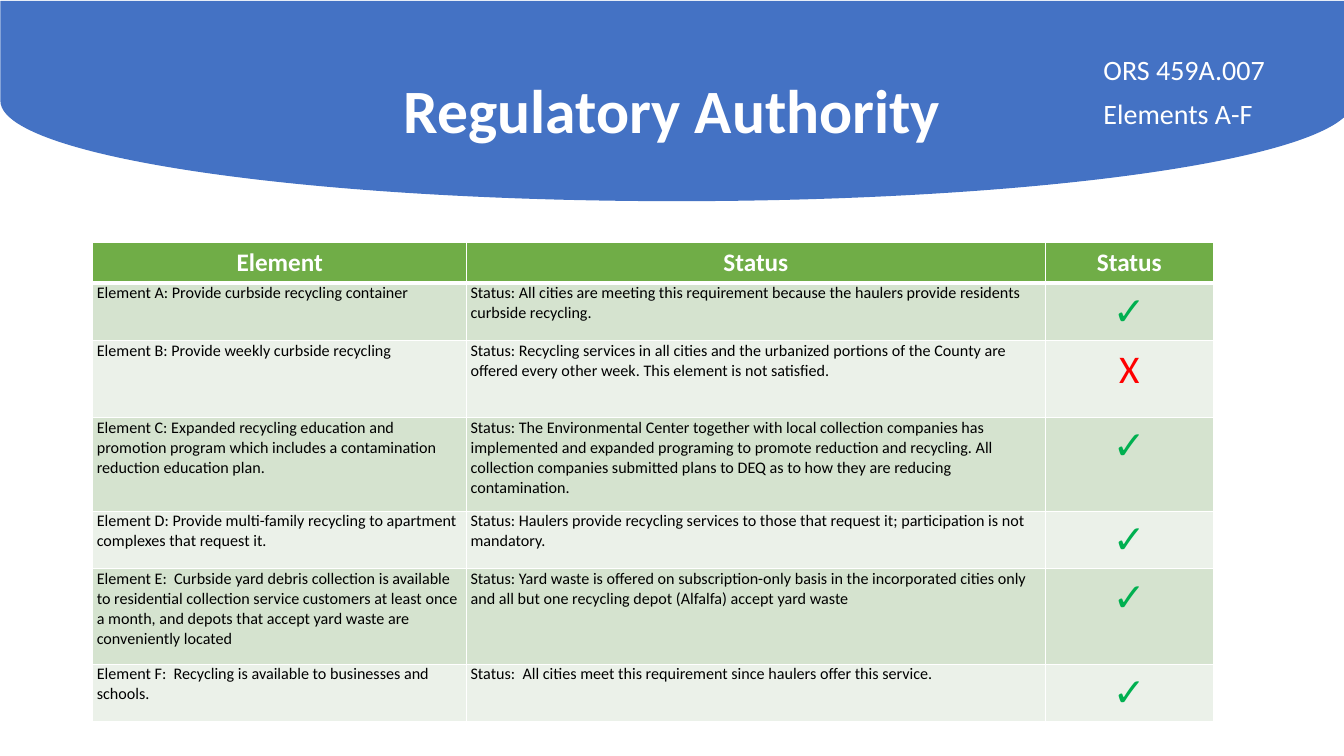
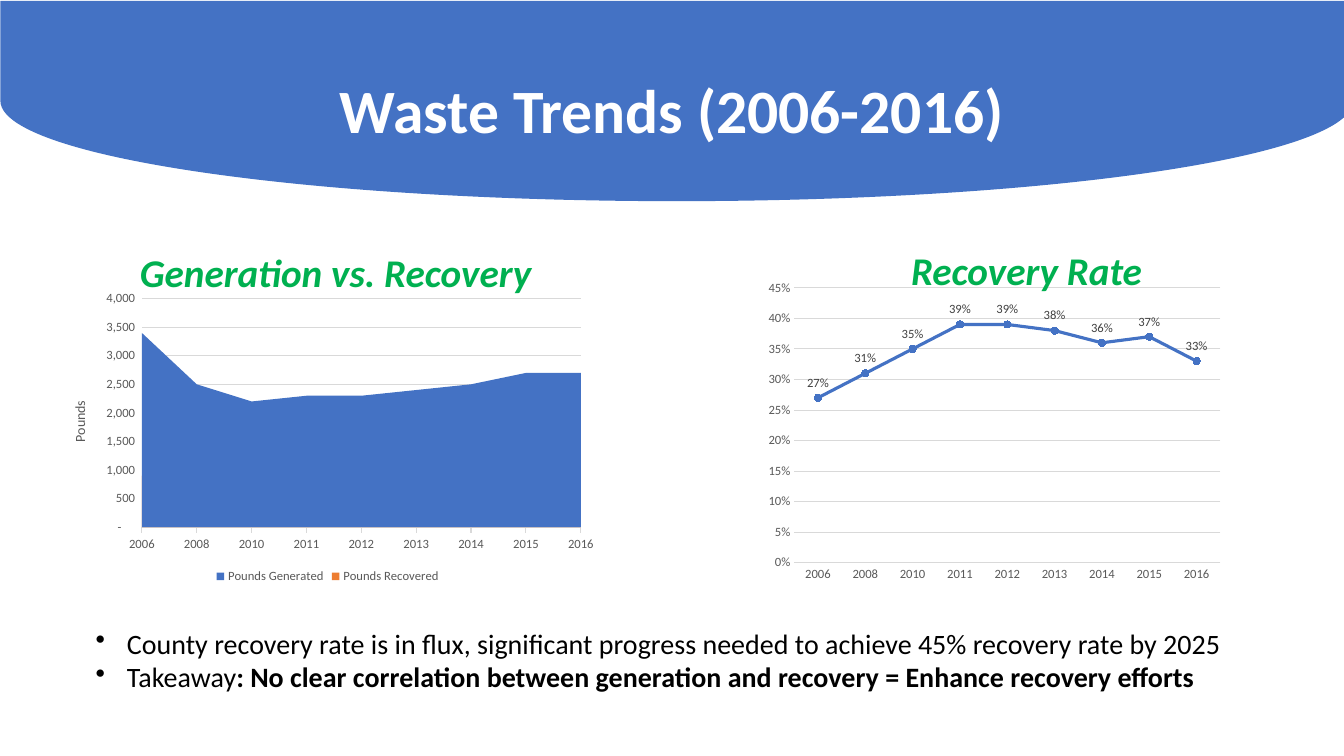
import dataclasses

import lxml.etree
import pptx
import pptx.chart.data
import pptx.dml.color
import pptx.enum.chart
import pptx.enum.shapes
import pptx.enum.text
import pptx.oxml.ns
import pptx.util

Cm = pptx.util.Cm
Pt = pptx.util.Pt
qn = pptx.oxml.ns.qn
Align = pptx.enum.text.PP_ALIGN
Kind = pptx.enum.chart.XL_CHART_TYPE


@dataclasses.dataclass(frozen=True)
class Theme:
    font: str = "Calibri"
    blue: str = "4472C4"
    orange: str = "ED7D31"
    head: str = "70AD47"
    bands: tuple = ("D5E3CF", "EBF1E9")
    white: str = "FFFFFF"
    black: str = "000000"
    green: str = "00B050"
    red: str = "FF0000"
    grid: str = "D9D9D9"
    gray: str = "595959"
    label: str = "404040"
    title: float = 44
    large: float = 28
    body: float = 20
    header: float = 18
    cell: float = 11.5
    axis: float = 10
    tick: float = 9


THEME = Theme()
YES, NO = "✓", "X"
ROWS = [
    ("Element A: Provide curbside recycling container",
     "Status: All cities are meeting this requirement because the haulers "
     "provide residents curbside recycling.", YES),
    ("Element B: Provide weekly curbside recycling",
     "Status: Recycling services in all cities and the urbanized portions of "
     "the County are offered every other week. This element is not satisfied.", NO),
    ("Element C: Expanded recycling education and promotion program which "
     "includes a contamination reduction education plan.",
     "Status: The Environmental Center together with local collection companies "
     "has implemented and expanded programing to promote reduction and "
     "recycling. All collection companies submitted plans to DEQ as to how they "
     "are reducing contamination.", YES),
    ("Element D: Provide multi-family recycling to apartment complexes that "
     "request it.",
     "Status: Haulers provide recycling services to those that request it; "
     "participation is not mandatory.", YES),
    ("Element E:  Curbside yard debris collection is available to residential "
     "collection service customers at least once a month, and depots that accept "
     "yard waste are conveniently located",
     "Status: Yard waste is offered on subscription-only basis in the "
     "incorporated cities only and all but one recycling depot (Alfalfa) accept "
     "yard waste", YES),
    ("Element F:  Recycling is available to businesses and schools.",
     "Status:  All cities meet this requirement since haulers offer this "
     "service.", YES),
]
WIDTHS = (9.42, 14.58, 4.24)
HEIGHTS = (1.02, 1.45, 1.93, 2.36, 1.45, 2.41, 1.45)
YEARS = ("2006", "2008", "2010", "2011", "2012", "2013", "2014", "2015", "2016")
MADE = (3400, 2500, 2200, 2300, 2300, 2400, 2500, 2700, 2700)
SAVED = (900, 800, 800, 900, 900, 900, 900, 1000, 900)
RATES = (0.27, 0.31, 0.35, 0.39, 0.39, 0.38, 0.36, 0.37, 0.33)
COUNT = '_(* #,##0_);_(* \\(#,##0\\);_(* "-"??_);_(@_)'


def rgb(color):
    return pptx.dml.color.RGBColor.from_string(color)


def style(font, size, color, bold=False, italic=False):
    font.name = THEME.font
    font.size = Pt(size)
    font.color.rgb = rgb(color)
    font.bold = bold
    font.italic = italic


def paint(part, color):
    part.fill.solid()
    part.fill.fore_color.rgb = rgb(color)


def write(frame, lines, size, color, align=None, space=None, **look):
    frame.word_wrap = True
    frame.text = "\n".join(lines)
    for para in frame.paragraphs:
        para.alignment = align
        para.line_spacing = space
        for run in para.runs:
            style(run.font, size, color, **look)


def add_text(slide, box, lines, size, color, **look):
    frame = slide.shapes.add_textbox(*map(Cm, box)).text_frame
    write(frame, lines, size, color, **look)
    return frame


def add_page(deck, title):
    slide = deck.slides.add_slide(deck.slide_layouts[6])
    delay = pptx.enum.shapes.MSO_SHAPE.FLOWCHART_DELAY
    band = slide.shapes.add_shape(delay, Cm(14.53), Cm(-14.5), Cm(5.05), Cm(34.09))
    band.rotation = 90
    band.shadow.inherit = False
    paint(band, THEME.blue)
    band.line.fill.background()
    frame = add_text(slide, (2.34, 1.02, 29.21, 3.68), [title], THEME.title,
                     THEME.white, align=Align.CENTER, space=0.9, bold=True)
    frame.vertical_anchor = pptx.enum.text.MSO_ANCHOR.MIDDLE
    return slide


def add_edges(cell, top, base):
    props = cell._tc.get_or_add_tcPr()
    sides = (("a:lnL", 1), ("a:lnR", 1), ("a:lnT", top), ("a:lnB", base))
    for spot, (tag, width) in enumerate(sides):
        line = lxml.etree.Element(qn(tag), w=str(Pt(width)))
        fill = lxml.etree.SubElement(line, qn("a:solidFill"))
        lxml.etree.SubElement(fill, qn("a:srgbClr"), val=THEME.white)
        props.insert(spot, line)


def fill_cell(cell, text, row, col):
    paint(cell, THEME.bands[(row - 1) % 2] if row else THEME.head)
    add_edges(cell, 3 if row == 1 else 1, 1 if row else 3)
    if row == 0:
        write(cell.text_frame, [text], THEME.header, THEME.white,
              align=Align.CENTER, bold=True)
    elif col == 2:
        color = THEME.green if text == YES else THEME.red
        write(cell.text_frame, [text], THEME.large, color, align=Align.CENTER)
    else:
        cell.margin_left = cell.margin_right = Cm(0.1)
        cell.margin_top = cell.margin_bottom = Cm(0)
        write(cell.text_frame, [text], THEME.cell, THEME.black, space=1.02)


def add_grid(slide, left, top, rows):
    table = slide.shapes.add_table(
        len(rows), len(WIDTHS), Cm(left), Cm(top),
        Cm(sum(WIDTHS)), Cm(sum(HEIGHTS))).table
    for col, width in zip(table.columns, WIDTHS):
        col.width = Cm(width)
    for line, height in zip(table.rows, HEIGHTS):
        line.height = Cm(height)
    for row, texts in enumerate(rows):
        for col, text in enumerate(texts):
            fill_cell(table.cell(row, col), text, row, col)


def add_chart(slide, box, kind, series, form, top, step):
    data = pptx.chart.data.CategoryChartData()
    data.categories = YEARS
    for name, vals in series:
        data.add_series(name, vals)
    chart = slide.shapes.add_chart(kind, *map(Cm, box), data).chart
    chart.has_title = False
    chart.has_legend = False
    style(chart.font, THEME.axis, THEME.black)
    chart.plots[0].vary_by_categories = False
    marks = pptx.enum.chart.XL_TICK_MARK
    for axis in (chart.category_axis, chart.value_axis):
        style(axis.tick_labels.font, THEME.tick, THEME.gray)
        axis.major_tick_mark = axis.minor_tick_mark = marks.NONE
    axis = chart.category_axis
    axis.has_major_gridlines = False
    value = chart.value_axis
    value.minimum_scale, value.maximum_scale = 0, top
    value.major_unit = step
    value.tick_labels.number_format = form
    value.tick_labels.number_format_is_linked = False
    value.format.line.fill.background()
    value.has_major_gridlines = True
    for line in (axis.format.line, value.major_gridlines.format.line):
        line.color.rgb = rgb(THEME.grid)
        line.width = Pt(0.75)
    return chart


def add_area(slide, box):
    series = (("Pounds Generated", MADE), ("Pounds Recovered", SAVED))
    chart = add_chart(slide, box, Kind.AREA, series, COUNT, 4000, 500)
    for item, color in zip(chart.plots[0].series, (THEME.blue, THEME.orange)):
        paint(item.format, color)
    chart.category_axis.major_tick_mark = pptx.enum.chart.XL_TICK_MARK.OUTSIDE
    frame = chart.value_axis.axis_title.text_frame
    frame.text = "Pounds"
    style(frame.paragraphs[0].runs[0].font, THEME.axis, THEME.gray)
    chart.has_legend = True
    chart.legend.position = pptx.enum.chart.XL_LEGEND_POSITION.BOTTOM
    chart.legend.include_in_layout = False
    style(chart.legend.font, THEME.tick, THEME.gray)


def add_line(slide, box):
    chart = add_chart(slide, box, Kind.LINE_MARKERS, [("Series 1", RATES)],
                      "0%", 0.45, 0.05)
    item = chart.plots[0].series[0]
    item.smooth = False
    item.format.line.color.rgb = rgb(THEME.blue)
    item.format.line.width = Pt(2.25)
    item.marker.style = pptx.enum.chart.XL_MARKER_STYLE.CIRCLE
    item.marker.size = 5
    paint(item.marker.format, THEME.blue)
    item.marker.format.line.color.rgb = rgb(THEME.blue)
    labels = item.data_labels
    labels.show_value = True
    labels.number_format = "0%"
    labels.number_format_is_linked = False
    labels.position = pptx.enum.chart.XL_LABEL_POSITION.ABOVE
    style(labels.font, THEME.tick, THEME.label)


def add_list(slide, box, lines):
    frame = add_text(slide, box, lines, THEME.body, THEME.black)
    for para in frame.paragraphs:
        props = para._p.get_or_add_pPr()
        props.set("marL", str(Cm(0.79)))
        props.set("indent", str(Cm(-0.79)))
        lxml.etree.SubElement(props, qn("a:buChar"), char="•")
    return frame


def add_rules(deck):
    slide = add_page(deck, "Regulatory Authority")
    add_grid(slide, 2.34, 6.12, [("Element", "Status", "Status")] + ROWS)
    frame = add_text(slide, (27.56, 1.3, 5.13, 2.18),
                     ["ORS 459A.007", "Elements A-F"],
                     THEME.body, THEME.white, space=0.9)
    frame.paragraphs[1].space_before = Pt(10)


def add_trends(deck):
    slide = add_page(deck, "Waste Trends (2006-2016)")
    add_area(slide, (1.27, 7.19, 13.97, 7.62))
    add_line(slide, (19.13, 6.91, 11.86, 7.9))
    heads = (("Recovery Rate", (21.82, 6.07, 8.1, 1.45)),
             ("Generation vs. Recovery", (2.84, 6.12, 11.23, 1.45)))
    for text, box in heads:
        add_text(slide, box, [text], THEME.large, THEME.green,
                 align=Align.CENTER, bold=True, italic=True)
    frame = add_list(slide, (2.16, 15.65, 33.99, 2.74), [
        "County recovery rate is in flux, significant progress needed to "
        "achieve 45% recovery rate by 2025", "Takeaway"])
    run = frame.paragraphs[1].add_run()
    run.text = (": No clear correlation between generation and recovery = "
                "Enhance recovery efforts")
    style(run.font, THEME.body, THEME.black, bold=True)


def main():
    deck = pptx.Presentation()
    deck.slide_width, deck.slide_height = Cm(33.87), Cm(19.05)
    add_rules(deck)
    add_trends(deck)
    deck.save("out.pptx")


if __name__ == "__main__":
    main()
